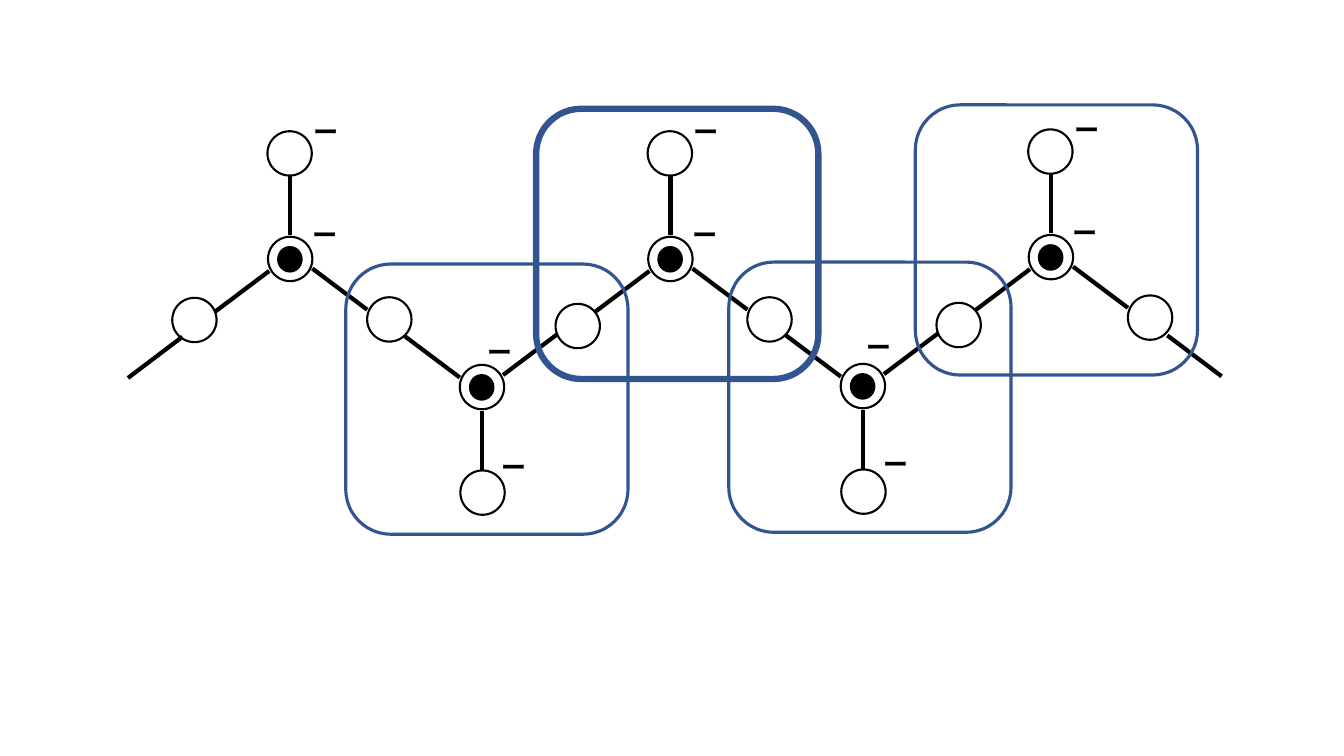
"""Draw a silicate chain of linked tetrahedra with framed repeat units."""
from dataclasses import dataclass

import lxml.etree
import pptx
import pptx.dml.color
import pptx.enum.shapes
import pptx.enum.text
import pptx.oxml.ns
import pptx.shapes.autoshape
import pptx.shapes.shapetree
import pptx.util

Pt = pptx.util.Pt
Point = tuple[float, float]
Shapes = pptx.shapes.shapetree._BaseGroupShapes
Preset = pptx.enum.shapes.MSO_SHAPE

COLOURS = {"ink": "000000", "paper": "FFFFFF", "frame": "325491"}
FONT = "TeX Gyre Schola"
ATOM_SIZE = (31.7, 31.7)
SILICON_SIZE = (17.3, 18)
CHARGE_SIZE = (45.4, 28.8)
FRAME_SIZE = (201.6, 193)
APEX, LEFT, RIGHT, CENTRE = (-0.4, -75.4), (-68.4, 43.6), (70.8, 43.2), (0, 0)
BONDS = [((0, -59.5), (0, -17.3)), ((-53.6, 37.6), (-15, 8.6)), ((15.8, 6.8), (55, 36.2))]
UPRIGHT_CHARGES = ((31.3, -17.3), (32.2, -91.4))


@dataclass(frozen=True)
class Tetrahedron:
    """A unit; offsets of its oxygens and bonds turn with its direction."""
    centre: Point
    direction: int = 1
    charges: tuple[Point, Point] = UPRIGHT_CHARGES
    oxygens: tuple[Point, ...] = (APEX, RIGHT)

    def place(self, offset: Point) -> Point:
        """Return the slide position of an offset within the unit."""
        return (self.centre[0] + self.direction * offset[0],
                self.centre[1] + self.direction * offset[1])


@dataclass(frozen=True)
class Frame:
    """A rounded frame around a repeat unit."""
    centre: Point
    weight: float = 2.25


CHAIN = [
    Tetrahedron((750.7, 183.7)),
    Tetrahedron((344.3, 276.5), -1, ((-6.1, 24.5), (-16.2, -57.6)), (APEX, LEFT)),
    Tetrahedron((207.3, 185), oxygens=(APEX, RIGHT, LEFT)),
    Tetrahedron((478.9, 185)),
    Tetrahedron((616.4, 275.8), -1, ((-4.7, 27.4), (-16.9, -56.2)), (APEX, LEFT)),
]
CHAIN_ENDS = [((91.4, 270), (130.3, 240.6)), ((872.6, 268.8), (833.8, 239.6))]
FRAMES = [Frame((483.8, 174.2), 4.5), Frame((621.4, 283.7)),
          Frame((347.8, 285.1)), Frame((754.6, 171.4))]


def colour(key: str) -> pptx.dml.color.RGBColor:
    """Return a named colour."""
    return pptx.dml.color.RGBColor.from_string(COLOURS[key])


def corner_box(centre: Point, size: Point) -> list[pptx.util.Length]:
    """Return left, top, width and height around a centre."""
    return [Pt(centre[0] - size[0] / 2), Pt(centre[1] - size[1] / 2), Pt(size[0]), Pt(size[1])]


def draw_outline(shapes: Shapes, preset: Preset, centre: Point, size: Point,
                 line: str, weight: float, fill: str | None = None) -> None:
    """Add a preset shape with a line and an optional fill."""
    outline = shapes.add_shape(preset, *corner_box(centre, size))
    outline.shadow.inherit = False
    if fill:
        outline.fill.solid()
        outline.fill.fore_color.rgb = colour(fill)
    else:
        outline.fill.background()
    outline.line.color.rgb = colour(line)
    outline.line.width = Pt(weight)


def draw_bond(shapes: Shapes, start: Point, end: Point) -> None:
    """Add a straight bond."""
    bond = shapes.add_connector(pptx.enum.shapes.MSO_CONNECTOR.STRAIGHT,
                                *(Pt(value) for value in (*start, *end)))
    bond.line.color.rgb = colour("ink")
    bond.line.width = Pt(3)
    lxml.etree.SubElement(bond._element.spPr, pptx.oxml.ns.qn("a:effectLst"))


def draw_charge(shapes: Shapes, centre: Point, rotation: float) -> None:
    """Add a minus sign."""
    charge = shapes.add_textbox(*corner_box(centre, CHARGE_SIZE))
    charge.rotation = rotation
    charge.text_frame.word_wrap = True
    charge.text_frame.auto_size = pptx.enum.text.MSO_AUTO_SIZE.SHAPE_TO_FIT_TEXT
    sign = charge.text_frame.paragraphs[0].add_run()
    sign.text = "ー"
    sign.font.name = FONT
    sign.font.size = Pt(18)
    sign.font.bold = True
    sign.font.color.rgb = colour("ink")
    east_asian = lxml.etree.SubElement(sign.font._element, pptx.oxml.ns.qn("a:ea"))
    east_asian.set("typeface", FONT)


def draw_tetrahedron(shapes: Shapes, unit: Tetrahedron) -> None:
    """Add a grouped tetrahedron."""
    members = shapes.add_group_shape().shapes
    for offset in (*unit.oxygens, CENTRE):
        draw_outline(members, Preset.OVAL, unit.place(offset), ATOM_SIZE, "ink", 1.5, "paper")
    silicon = (unit.centre[0] - 0.2, unit.centre[1] + 0.2)
    draw_outline(members, Preset.OVAL, silicon, SILICON_SIZE, "ink", 1, "ink")
    for start, end in BONDS:
        draw_bond(members, unit.place(start), unit.place(end))
    for offset in unit.charges:
        draw_charge(members, unit.place(offset), 0 if unit.direction == 1 else 180)


def main() -> None:
    """Build and save the slide."""
    deck = pptx.Presentation()
    deck.slide_width, deck.slide_height = Pt(960), Pt(540)
    shapes = deck.slides.add_slide(deck.slide_layouts[6]).shapes
    for unit in CHAIN:
        draw_tetrahedron(shapes, unit)
    for start, end in CHAIN_ENDS:
        draw_bond(shapes, start, end)
    for frame in FRAMES:
        draw_outline(shapes, Preset.ROUNDED_RECTANGLE, frame.centre, FRAME_SIZE,
                     "frame", frame.weight)
    deck.save("out.pptx")


if __name__ == "__main__":
    main()
